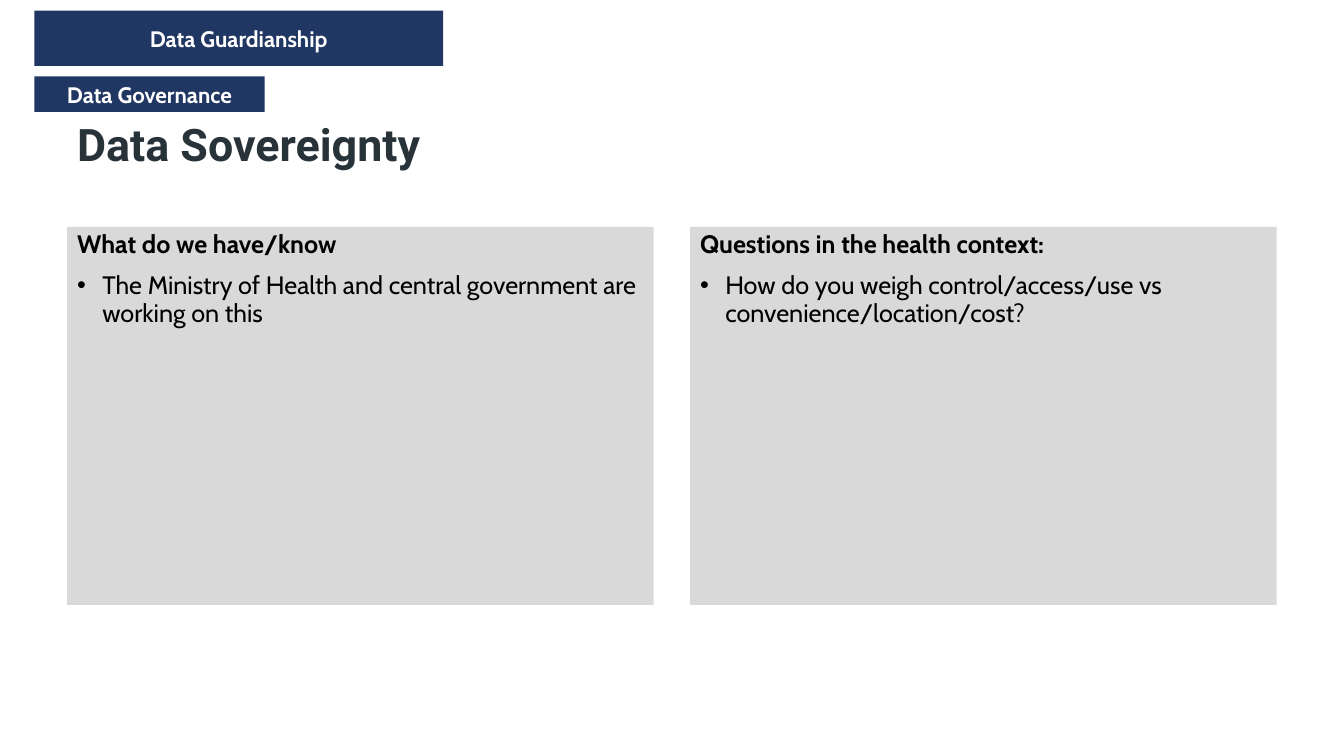
from lxml.etree import SubElement
from pptx import Presentation
from pptx.dml.color import RGBColor
from pptx.enum.shapes import MSO_SHAPE
from pptx.enum.text import MSO_ANCHOR, PP_ALIGN
from pptx.oxml.ns import qn
from pptx.util import Pt

NAVY = RGBColor(0x21, 0x37, 0x63)
SLATE = RGBColor(0x28, 0x32, 0x39)
GREY = RGBColor(0xD9, 0xD9, 0xD9)
BLACK = RGBColor(0x00, 0x00, 0x00)
WHITE = RGBColor(0xFF, 0xFF, 0xFF)

MARGIN = 48
PAGE_WIDTH, PAGE_HEIGHT = 960, 540
PANEL_WIDTH, PANEL_GAP = 419, 26
TAG_LEFT = 24.5
BULLET_INDENT = 18


class SlideBuilder:
    """Holds the current slide and its text style."""

    heading_font = "Roboto"
    body_font = "Cabin"
    line_spacing = 0.9

    def __init__(self, page):
        self.page = page

    def add_span(self, para, text, size, color, bold=True, font=None):
        span = para.add_run()
        span.text = text
        span.font.name = font or self.body_font
        span.font.size = Pt(size)
        span.font.bold = bold
        span.font.color.rgb = color

    def rectangle(self, left, top, width, height, color):
        box = self.page.shapes.add_shape(
            MSO_SHAPE.RECTANGLE, Pt(left), Pt(top), Pt(width), Pt(height))
        box.shadow.inherit = False
        box.fill.solid()
        box.fill.fore_color.rgb = color
        box.line.fill.background()
        return box

    def title(self, text, left, top, width, height):
        box = self.page.shapes.add_textbox(Pt(left), Pt(top), Pt(width), Pt(height))
        frame = box.text_frame
        frame.word_wrap = True
        frame.vertical_anchor = MSO_ANCHOR.MIDDLE
        para = frame.paragraphs[0]
        para.line_spacing = self.line_spacing
        self.add_span(para, text, 32, SLATE, font=self.heading_font)

    def tag(self, text, top, width, height):
        frame = self.rectangle(TAG_LEFT, top, width, height, NAVY).text_frame
        frame.word_wrap = False
        frame.vertical_anchor = MSO_ANCHOR.MIDDLE
        para = frame.paragraphs[0]
        para.alignment = PP_ALIGN.CENTER
        self.add_span(para, text, 16, WHITE)

    def panel(self, heading, point, left, top, width, height):
        frame = self.rectangle(left, top, width, height, GREY).text_frame
        frame.word_wrap = True
        frame.vertical_anchor = MSO_ANCHOR.TOP
        heading_para = frame.paragraphs[0]
        point_para = frame.add_paragraph()
        for para in (heading_para, point_para):
            para.alignment = PP_ALIGN.LEFT
            para.line_spacing = self.line_spacing
        point_para.space_before = Pt(10)
        self.add_bullet(point_para)
        self.add_span(heading_para, heading, 18, BLACK)
        self.add_span(point_para, point, 18, BLACK, bold=False)

    def add_bullet(self, para):
        properties = para._p.get_or_add_pPr()
        properties.set("marL", str(Pt(BULLET_INDENT)))
        properties.set("indent", str(-Pt(BULLET_INDENT)))
        SubElement(properties, qn("a:buFont")).set("typeface", "Arial")
        SubElement(properties, qn("a:buChar")).set("char", "•")


def main():
    deck = Presentation()
    deck.slide_width, deck.slide_height = Pt(PAGE_WIDTH), Pt(PAGE_HEIGHT)
    builder = SlideBuilder(deck.slides.add_slide(deck.slide_layouts[6]))

    # Title
    builder.title("Data Sovereignty", MARGIN, 60, PAGE_WIDTH - 2 * MARGIN, 90)

    # Topic tags
    builder.tag("Data Guardianship", 7.5, 292, 39.5)
    builder.tag("Data Governance", 54.5, 164.5, 25.5)

    # Two side-by-side panels
    panels = [
        ("What do we have/know",
         "The Ministry of Health and central government are working on this"),
        ("Questions in the health context:",
         "How do you weigh control/access/use vs convenience/location/cost?"),
    ]
    for column, (heading, point) in enumerate(panels):
        left = MARGIN + column * (PANEL_WIDTH + PANEL_GAP)
        builder.panel(heading, point, left, 162, PANEL_WIDTH, 270)

    deck.save("out.pptx")


if __name__ == "__main__":
    main()
